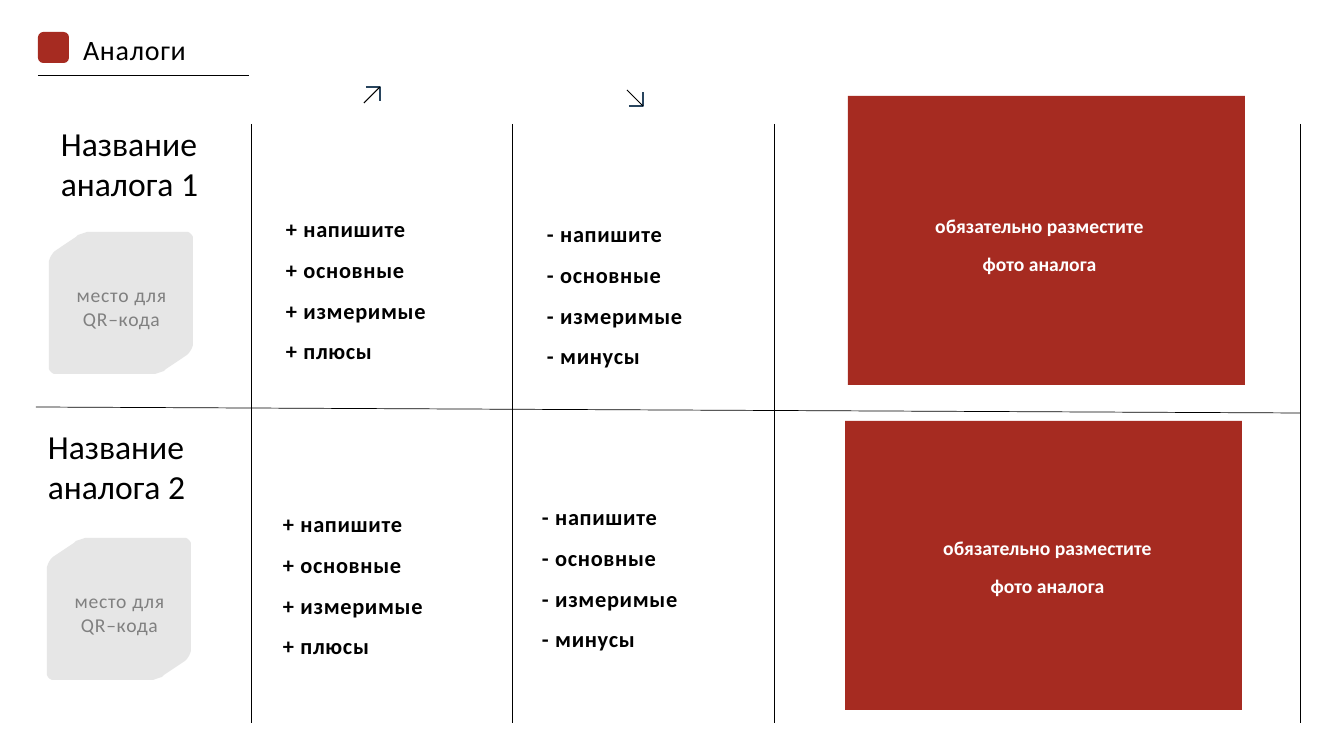
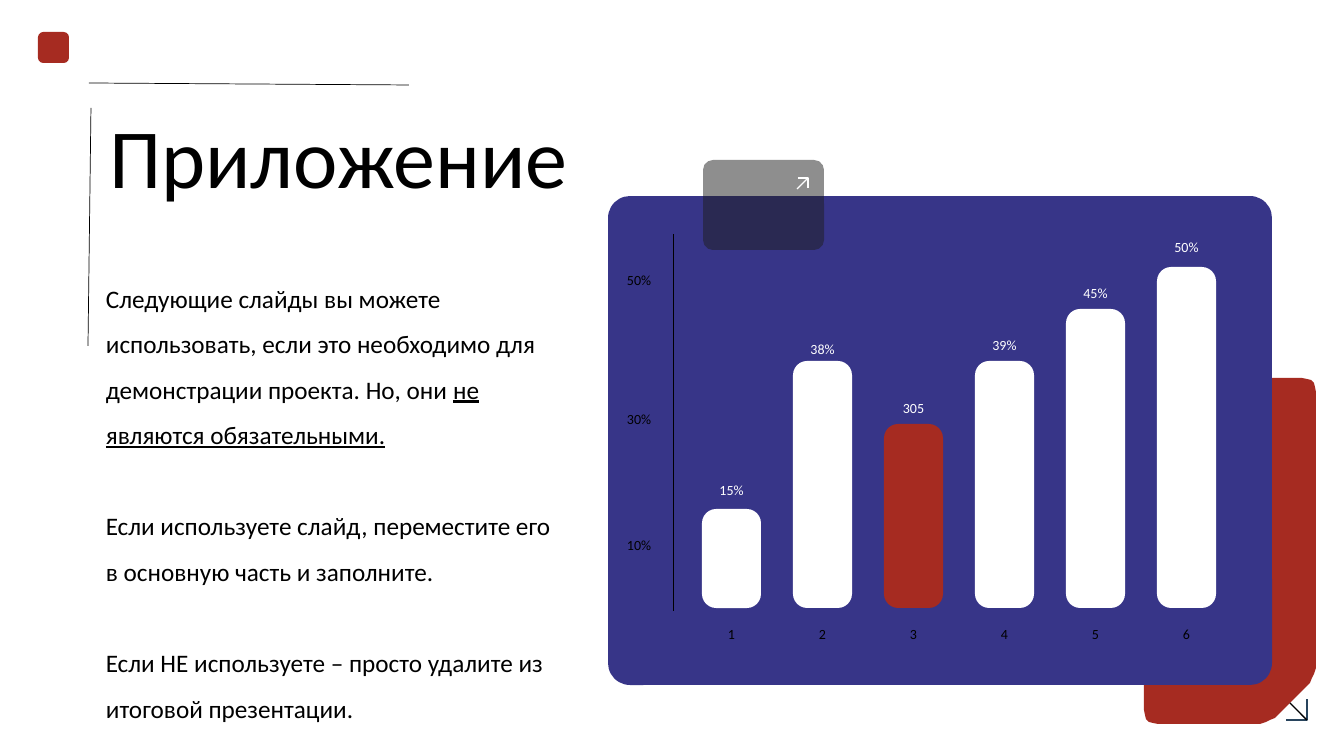
from math import hypot

from lxml.etree import SubElement
from pptx import Presentation
from pptx.dml.color import RGBColor
from pptx.enum.shapes import MSO_CONNECTOR, MSO_SHAPE
from pptx.enum.text import MSO_ANCHOR, MSO_AUTO_SIZE, PP_ALIGN
from pptx.oxml.ns import qn
from pptx.util import Pt

PX = 9071  # EMU in one px, at 100.8 px to the inch
FONT = "Calibri"
COLORS = {
    "red": "A62B21", "indigo": "373588", "charcoal": "1E1E1E", "steel": "28445D",
    "pale": "E6E6E6", "gray": "808080", "black": "000000", "white": "FFFFFF",
}
RGB = {name: RGBColor.from_string(value) for name, value in COLORS.items()}
LEFT, CENTER = PP_ALIGN.LEFT, PP_ALIGN.CENTER
TOP, MIDDLE = MSO_ANCHOR.TOP, MSO_ANCHOR.MIDDLE


def write(slide, box, lines, size, color="black", align=LEFT, anchor=TOP,
          bold=False, before=0, tracking=0, holder=None):
    """Write lines into a new text box, or into a given placeholder."""
    holder = holder or slide.shapes.add_textbox(0, 0, 0, 0)
    holder.left, holder.top, holder.width, holder.height = [v * PX for v in box]
    frame = holder.text_frame
    frame.text = "\n".join(lines)
    frame.word_wrap = True
    frame.auto_size = MSO_AUTO_SIZE.NONE
    frame.vertical_anchor = anchor
    for paragraph in frame.paragraphs:
        paragraph.alignment = align
        paragraph.space_before = Pt(before)
        for run in paragraph.runs:
            run.font.name, run.font.size, run.font.bold = FONT, Pt(size), bold
            run.font.color.rgb = RGB[color]
            if tracking:
                run.font._element.set("spc", str(tracking))
    return frame


def draw_line(slide, start, end, color="black", width=0.5):
    """Draw a straight line without a shadow."""
    points = [v * PX for v in (*start, *end)]
    line = slide.shapes.add_connector(MSO_CONNECTOR.STRAIGHT, *points)
    line.line.color.rgb, line.line.width = RGB[color], Pt(width)
    SubElement(line._element.spPr, qn("a:effectLst"))


prs = Presentation()
prs.slide_width, prs.slide_height = 1344 * PX, 756 * PX
analogs, appendix = [prs.slides.add_slide(prs.slide_layouts[5]) for _ in range(2)]

# Titles
for slide, title, box, size, tracking in [
    (analogs, "Аналоги", (73, 25, 200, 48), 20, 50),
    (appendix, "Приложение", (99, 95, 671, 120), 60, 0),
]:
    write(slide, box, [title], size, anchor=MIDDLE, tracking=tracking,
          holder=slide.shapes.title)

# Cards with two cut and six rounded corners
QR_CARDS = [(49, 232), (47, 538)]
cards = [(analogs, x, y, 144, 142, 33, 24, 8, "pale") for x, y in QR_CARDS]
cards.append((appendix, 1144, 378, 172, 346, 47, 47, 14, "red"))
for slide, x, y, w, h, cut_w, cut_h, radius, color in cards:
    corners = [(x + cut_w, y), (x + w, y), (x + w, y + h - cut_h),
               (x + w - cut_w, y + h), (x, y + h), (x, y + cut_h)]
    outline = []
    for i, (cx, cy) in enumerate(corners):
        ends = []
        for nx, ny in (corners[i - 1], corners[(i + 1) % 6]):
            share = radius / hypot(nx - cx, ny - cy)
            ends.append((cx + (nx - cx) * share, cy + (ny - cy) * share))
        (ax, ay), (bx, by) = ends
        for t in (0, 0.2, 0.4, 0.6, 0.8, 1):
            a, c, b = (1 - t) ** 2, 2 * t * (1 - t), t ** 2
            outline.append((a * ax + c * cx + b * bx, a * ay + c * cy + b * by))
    builder = slide.shapes.build_freeform(*outline[0], scale=PX)
    builder.add_line_segments(outline[1:], close=True)
    card = builder.convert_to_shape()
    card.shadow.inherit = False
    card.fill.solid()
    card.fill.fore_color.rgb = RGB[color]
    card.line.fill.background()

# Plain blocks: markers, photo places, chart panel, bars and badge
BAR_LEFT, BAR_STEP, BAR_WIDTH, BAR_BOTTOM = 702, 91, 59, 608
BARS = [  # height, value, top of the value
    (99, "15%", 477), (247, "38%", 336), (184, "305", 395),
    (247, "39%", 332), (299, "45%", 280), (341, "50%", 234),
]
blocks = [(slide, (38, 32, 31, 31), "red", 0.17) for slide in (analogs, appendix)]
blocks += [(analogs, (x, y, 397, 289), "red", 0) for x, y in [(848, 96), (845, 421)]]
blocks.append((appendix, (608, 196, 664, 489), "indigo", 0.045))
for i, (height, value, _) in enumerate(BARS):
    bar = (BAR_LEFT + i * BAR_STEP, BAR_BOTTOM - height, BAR_WIDTH, height)
    blocks.append((appendix, bar, "red" if value == "305" else "white", 0.24))
blocks.append((appendix, (703, 160, 121, 90), "charcoal", 0.11))

for slide, box, color, rounding in blocks:
    kind = MSO_SHAPE.ROUNDED_RECTANGLE if rounding else MSO_SHAPE.RECTANGLE
    block = slide.shapes.add_shape(kind, *[v * PX for v in box])
    if rounding:
        block.adjustments[0] = rounding
    block.shadow.inherit = False
    block.fill.solid()
    block.fill.fore_color.rgb = RGB[color]
    block.line.fill.background()
    if color == "charcoal":  # the badge lets the panel show through
        tint = block._element.spPr.find(".//" + qn("a:srgbClr"))
        SubElement(tint, qn("a:alpha")).set("val", "50000")

# Analogs: grid lines
draw_line(analogs, (38, 75), (249, 75))
for x in (251, 512, 774, 1300):
    draw_line(analogs, (x, 124), (x, 723))
draw_line(analogs, (1300, 413), (36, 407))

# Analogs: names, QR places, pluses, minuses, photo captions
for number, (x, y) in enumerate([(51, 61), (38, 364)], 1):
    write(analogs, (x, y, 175, 204), [f"Название аналога {number}"], 24, anchor=MIDDLE)
for x, y in QR_CARDS:
    write(analogs, (x - 10, y + 46, 165, 57), ["место для", "QR–кода"], 14, "gray",
          CENTER, tracking=50)
for sign, last, places in [
    ("+", "плюсы", [(276, 210), (273, 505)]),
    ("-", "минусы", [(537, 215), (532, 498)]),
]:
    points = [f"{sign} {word}" for word in ("напишите", "основные", "измеримые", last)]
    for x, y in places:
        write(analogs, (x, y, 180, 159), points, 16, bold=True, before=10, tracking=50)
for x, y in [(842, 209), (850, 531)]:
    write(analogs, (x, y, 395, 95), ["обязательно разместите", "фото аналога"], 14,
          "white", CENTER, bold=True, before=10)

# Appendix: lines beside the title, and the chart axis
draw_line(appendix, (91, 108), (88, 346))
draw_line(appendix, (89, 83), (409, 85))
draw_line(appendix, (673, 234), (673, 611))

# Appendix: body text
body = write(appendix, (96, 263, 479, 470), [
    "Следующие слайды вы можете использовать, если это необходимо для "
    "демонстрации проекта. Но, они ",
    "Если используете слайд, переместите его в основную часть и заполните.",
    "Если НЕ используете – просто удалите из итоговой презентации.",
], 18, before=33)
for paragraph in body.paragraphs:
    paragraph.line_spacing = 1.5
stressed = body.paragraphs[0].add_run()
stressed.text = "не являются обязательными."
stressed.font.name, stressed.font.size = FONT, Pt(18)
stressed.font.color.rgb = RGB["black"]
stressed.font.underline = True

# Appendix: chart labels
for label, y in [("50%", 267), ("30%", 406), ("10%", 532)]:
    write(appendix, (609, y, 60, 29), [label], 10, align=CENTER)
for i, (_, value, y) in enumerate(BARS):
    x = BAR_LEFT + i * BAR_STEP + 1
    write(appendix, (x, y, 57, 29), [value], 10, "white", CENTER)
    write(appendix, (x, 621, 57, 29), [str(i + 1)], 10, align=CENTER)

# Diagonal arrows: a hook around the tip and a tail; side is 1 up, -1 down
for slide, x, y, side, hook, tail, hook_color, tail_color, width in [
    (analogs, 380, 87, 1, 14, 16, "steel", "black", 0.75),
    (analogs, 643, 106, -1, 14, 16, "steel", "black", 0.75),
    (appendix, 808, 178, 1, 10, 11, "white", "white", 1),
    (appendix, 1307, 720, -1, 21, 17, "steel", "black", 1),
]:
    builder = slide.shapes.build_freeform(x - hook, y, scale=PX)
    builder.add_line_segments([(x, y), (x, y + side * hook)], close=False)
    head = builder.convert_to_shape()
    head.shadow.inherit = False
    head.fill.background()
    head.line.color.rgb, head.line.width = RGB[hook_color], Pt(width)
    draw_line(slide, (x - tail, y + side * tail), (x, y), tail_color, width)

prs.save("out.pptx")
